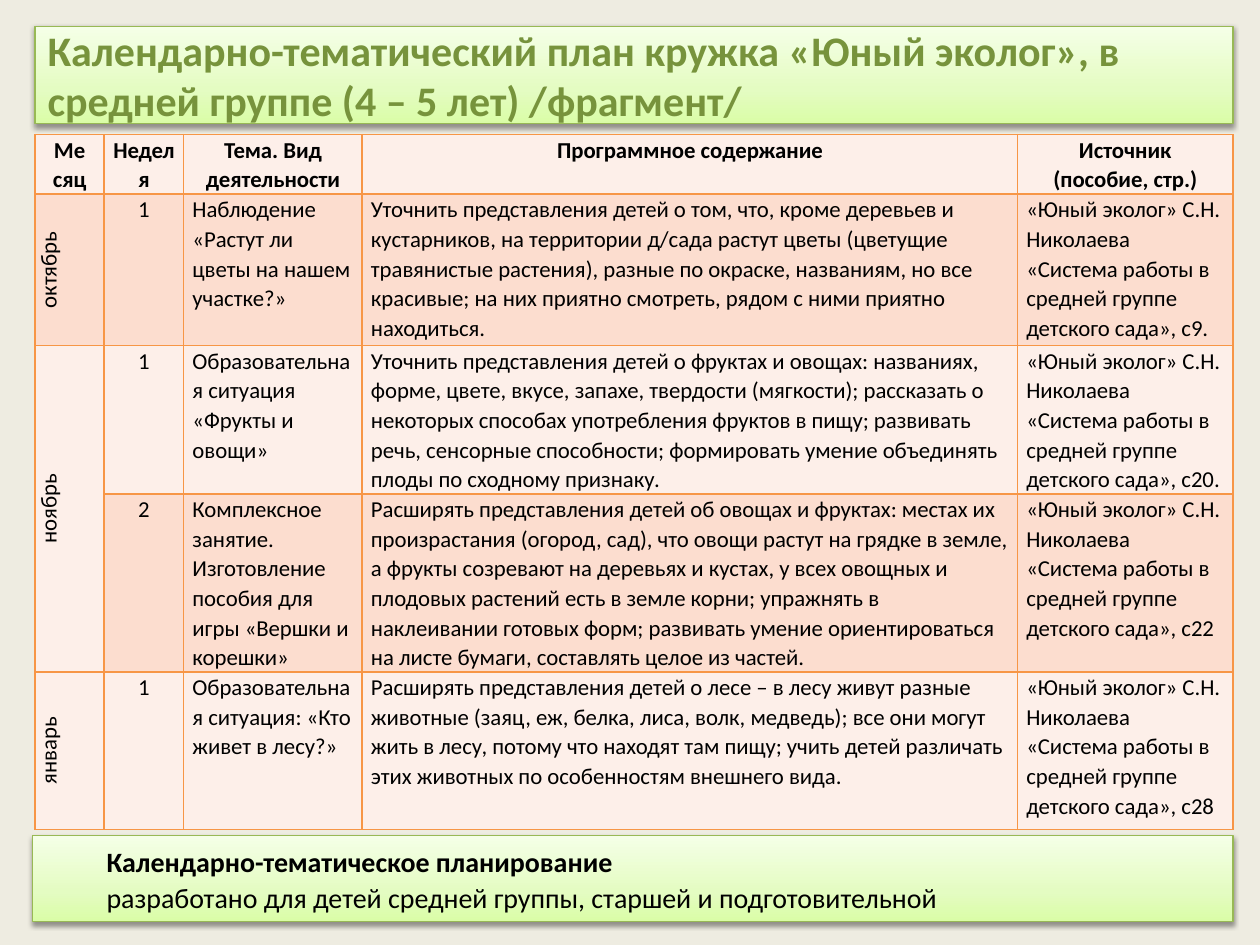
from copy import deepcopy

from lxml.etree import SubElement
from pptx import Presentation
from pptx.dml.color import RGBColor
from pptx.enum.shapes import MSO_SHAPE
from pptx.enum.text import MSO_ANCHOR, MSO_AUTO_SIZE, PP_ALIGN
from pptx.oxml import parse_xml
from pptx.oxml.ns import nsdecls, qn
from pptx.util import Pt

CREAM = RGBColor(0xEE, 0xEC, 0xE1)
OLIVE = RGBColor(0x77, 0x93, 0x3C)
GREEN = RGBColor(0x98, 0xB9, 0x55)
ORANGE = RGBColor(0xF7, 0x96, 0x46)
PALE = RGBColor(0xFD, 0xEF, 0xE9)
PEACH = RGBColor(0xFC, 0xDD, 0xCF)
BLACK = RGBColor(0, 0, 0)
GRADIENT = [
    (0, RGBColor(0xDA, 0xFD, 0xA7)),
    (35, RGBColor(0xE4, 0xFC, 0xC2)),
    (100, RGBColor(0xF5, 0xFF, 0xE7)),
]
LEFT, CENTER, JUSTIFY = PP_ALIGN.LEFT, PP_ALIGN.CENTER, PP_ALIGN.JUSTIFY


def write(frame, lines, size=13, color=BLACK, bold=False, align=LEFT,
          spacing=None, indent=0, font="Calibri"):
    """Fill a text frame, one paragraph for each line; "\\v" breaks a line."""
    for number, line in enumerate(lines):
        para = frame.paragraphs[0] if number == 0 else frame.add_paragraph()
        para.text = line
        para.alignment = align
        para.line_spacing = spacing
        if indent:
            para._p.get_or_add_pPr().set("indent", str(Pt(indent)))
        for span in para.runs:
            span.font.name = font
            span.font.size = Pt(size)
            span.font.bold = bold
            span.font.color.rgb = color
        # Line breaks take the format of the text around them
        for line_break in para._p.findall(qn("a:br")):
            line_break.insert(0, deepcopy(para.runs[0]._r.rPr))


class Builder:
    def __init__(self, width, height):
        self.deck = Presentation()
        self.deck.slide_width, self.deck.slide_height = Pt(width), Pt(height)
        self.page = self.deck.slides.add_slide(self.deck.slide_layouts[5])
        self.page.background.fill.solid()
        self.page.background.fill.fore_color.rgb = CREAM

    def style_panel(self, box):
        """Green gradient, thin outline and a soft shadow below."""
        stops = "".join(
            f'<a:gs pos="{place * 1000}"><a:srgbClr val="{color}"/></a:gs>'
            for place, color in GRADIENT)
        properties = box._element.spPr
        box.fill.background()
        properties.replace(properties.find(qn("a:noFill")), parse_xml(
            f'<a:gradFill {nsdecls("a")} rotWithShape="1"><a:gsLst>{stops}'
            '</a:gsLst><a:lin ang="16200000" scaled="0"/></a:gradFill>'))
        box.line.color.rgb = GREEN
        box.line.width = Pt(0.75)
        box.shadow.inherit = False
        effects = properties.find(qn("a:effectLst"))
        shadow = SubElement(effects, qn("a:outerShdw"), blurRad=str(Pt(3.1)),
                            dist=str(Pt(1.6)), dir="5400000", rotWithShape="0")
        tint = SubElement(shadow, qn("a:srgbClr"), val=str(BLACK))
        SubElement(tint, qn("a:alpha"), val="38000")

    def title(self, text, left, top, width, height):
        box = self.page.shapes.title
        box.left, box.top, box.width, box.height = map(
            Pt, (left, top, width, height))
        self.style_panel(box)
        box.text_frame.auto_size = MSO_AUTO_SIZE.NONE
        box.text_frame.vertical_anchor = MSO_ANCHOR.MIDDLE
        write(box.text_frame, [text], size=24, color=OLIVE, bold=True)

    def panel(self, heading, text, left, top, width, height):
        box = self.page.shapes.add_shape(
            MSO_SHAPE.RECTANGLE, *map(Pt, (left, top, width, height)))
        self.style_panel(box)
        frame = box.text_frame
        frame.word_wrap = True
        frame.vertical_anchor = MSO_ANCHOR.TOP
        frame.auto_size = MSO_AUTO_SIZE.SHAPE_TO_FIT_TEXT
        write(frame, [heading, text], size=16, align=JUSTIFY,
              spacing=1.07, indent=35.3)
        frame.paragraphs[0].runs[0].font.bold = True

    def table(self, rows, left, top, widths, heights):
        grid = self.page.shapes.add_table(
            len(rows), len(widths),
            *map(Pt, (left, top, sum(widths), sum(heights)))).table
        grid.first_row = grid.horz_banding = False
        for column, width in zip(grid.columns, widths):
            column.width = Pt(width)
        for row, height in zip(grid.rows, heights):
            row.height = Pt(height)
        for row, (fill, *texts) in enumerate(rows):
            for column, text in enumerate(texts):
                self.cell(grid.cell(row, column), text, fill,
                          head=row == 0, month=row > 0 and column == 0,
                          centered=row == 0 or column < 2)
        return grid

    def cell(self, cell, text, fill, head, month, centered):
        cell.margin_left = cell.margin_right = Pt(5)
        cell.margin_top = cell.margin_bottom = 0
        properties = cell._tc.get_or_add_tcPr()
        for side in ("a:lnL", "a:lnR", "a:lnT", "a:lnB"):
            line = SubElement(properties, qn(side), w=str(Pt(1)))
            paint = SubElement(line, qn("a:solidFill"))
            SubElement(paint, qn("a:srgbClr"), val=str(ORANGE))
        cell.fill.solid()
        cell.fill.fore_color.rgb = fill
        if month:
            properties.set("vert", "vert270")
        if text:
            write(cell.text_frame, text.split("\n"), bold=head,
                  align=CENTER if centered else LEFT,
                  spacing=None if month else 1.07)


def source(number):
    return ("«Юный эколог» С.Н. Николаева «Система работы в средней группе "
            f"детского сада», с{number}")


ROWS = [
    (PALE, "Ме\vсяц", "Неделя", "Тема. Вид деятельности",
     "Программное содержание", "Источник\n(пособие, стр.)"),
    (PEACH, "октябрь", "1",
     "Наблюдение\n«Растут ли цветы на нашем участке?»",
     "Уточнить представления детей о том, что, кроме деревьев и кустарников, "
     "на территории д/сада растут цветы (цветущие травянистые растения), "
     "разные по окраске, названиям, но все красивые; на них приятно "
     "смотреть, рядом с ними приятно находиться.",
     source("9.")),
    (PALE, "ноябрь", "1", "Образовательная ситуация «Фрукты и овощи»",
     "Уточнить представления детей о фруктах и овощах: названиях, форме, "
     "цвете, вкусе, запахе, твердости (мягкости); рассказать о некоторых "
     "способах употребления фруктов в пищу; развивать речь, сенсорные "
     "способности; формировать умение объединять плоды по сходному признаку.",
     source("20.")),
    (PEACH, "", "2",
     "Комплексное занятие. Изготовление пособия для игры «Вершки и корешки»",
     "Расширять представления детей об овощах и фруктах: местах их "
     "произрастания (огород, сад), что овощи растут на грядке в земле, а "
     "фрукты созревают на деревьях и кустах, у всех овощных и плодовых "
     "растений есть в земле корни; упражнять в наклеивании готовых форм; "
     "развивать умение ориентироваться на листе бумаги, составлять целое из "
     "частей.",
     source("22")),
    (PALE, "январь", "1", "Образовательная ситуация: «Кто живет в лесу?»",
     "Расширять представления детей о лесе – в лесу живут разные животные "
     "(заяц, еж, белка, лиса, волк, медведь); все они могут жить в лесу, "
     "потому что находят там пищу; учить детей различать этих животных по "
     "особенностям внешнего вида.",
     source("28")),
]


def main():
    builder = Builder(720, 540)

    # Title
    builder.title("Календарно-тематический план кружка «Юный эколог», в\v"
                  "средней группе (4 – 5 лет) /фрагмент/", 20, 15, 684.5, 55.5)

    # Plan by month and week; November takes two rows
    plan = builder.table(ROWS, 20, 77, widths=[39.5, 45.5, 102, 374.5, 123],
                         heights=[34, 86.5, 84.5, 101.5, 90])
    plan.cell(2, 0).merge(plan.cell(3, 0))
    for row in (2, 4):
        plan.cell(row, 0).vertical_anchor = MSO_ANCHOR.MIDDLE

    # Closing note
    builder.panel(
        "Календарно-тематическое планирование",
        "разработано для детей средней группы, старшей и подготовительной",
        18.5, 477.5, 686, 49)

    builder.deck.save("out.pptx")


if __name__ == "__main__":
    main()
